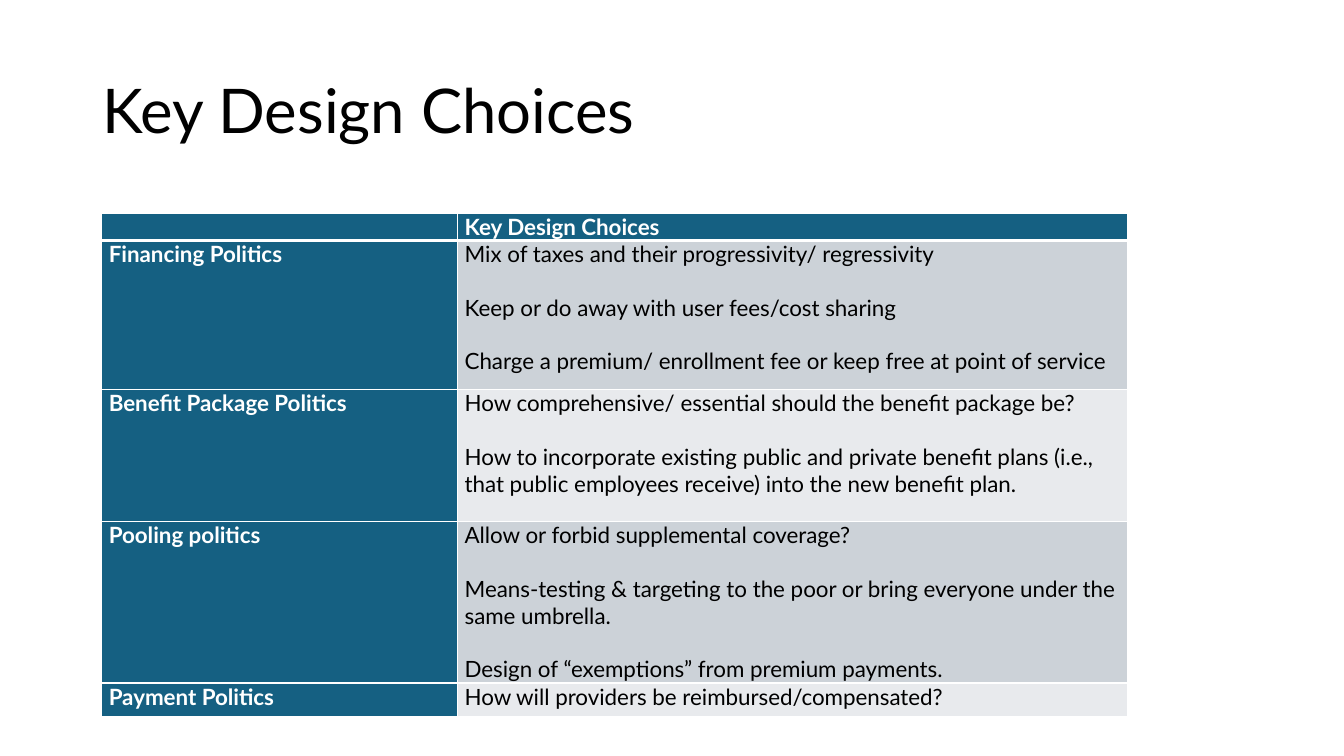
from lxml import etree
from pptx import Presentation
from pptx import util as u
from pptx.dml import color
from pptx.enum import text
from pptx.oxml import ns

FONT = "Lato"
WHITE, BLACK, TEAL = "FFFFFF", "000000", "156082"
BANDS = ("CCD2D8", "E8EAED")
BODY_SIZE = 16
LINE_GAP = 19.2  # one empty line of body text
COLUMN_WIDTHS = (254.2, 478.8)
ROW_HEIGHTS = (19, 106.6, 94.3, 115, 23.8)

CHOICES = [
    ("Financing Politics", [
        "Mix of taxes and their progressivity/ regressivity",
        "Keep or do away with user fees/cost sharing",
        "Charge a premium/ enrollment fee or keep free at point of service"]),
    ("Benefit Package Politics", [
        "How comprehensive/ essential should the benefit package be?",
        "How to incorporate existing public and private benefit plans (i.e., "
        "that public employees receive) into the new benefit plan."]),
    ("Pooling politics", [
        "Allow or forbid supplemental coverage?",
        "Means-testing & targeting to the poor or bring everyone under the "
        "same umbrella.",
        "Design of “exemptions” from premium payments."]),
    ("Payment Politics", [
        "How will providers be reimbursed/compensated?"]),
]


def rgb(hex_code):
    return color.RGBColor.from_string(hex_code)


def add_run(paragraph, wording, size, hex_code, bold=False):
    run = paragraph.add_run()
    run.text = wording
    run.font.name = FONT
    run.font.size = u.Pt(size)
    run.font.bold = bold
    run.font.color.rgb = rgb(hex_code)


def add_title(slide, wording):
    box = slide.shapes.add_textbox(u.Pt(66), u.Pt(28.75), u.Pt(828), u.Pt(104.4))
    frame = box.text_frame
    frame.word_wrap = True
    frame.vertical_anchor = text.MSO_ANCHOR.MIDDLE
    paragraph = frame.paragraphs[0]
    paragraph.line_spacing = 0.9
    add_run(paragraph, wording, 44, BLACK)


def set_borders(cell, bottom_width):
    properties = cell._tc.get_or_add_tcPr()
    for side, width in (("L", 1), ("R", 1), ("T", 1), ("B", bottom_width)):
        line = etree.SubElement(properties, ns.qn(f"a:ln{side}"), w=str(u.Pt(width)))
        fill = etree.SubElement(line, ns.qn("a:solidFill"))
        etree.SubElement(fill, ns.qn("a:srgbClr"), val=WHITE)


def fill_cell(cell, lines, fill, text_color, bold, bottom_width=1):
    cell.margin_left = cell.margin_right = u.Pt(5)
    cell.margin_top = cell.margin_bottom = u.Pt(0)
    set_borders(cell, bottom_width)
    cell.fill.solid()
    cell.fill.fore_color.rgb = rgb(fill)
    frame = cell.text_frame
    for index, wording in enumerate(lines):
        paragraph = frame.add_paragraph() if index else frame.paragraphs[0]
        paragraph.space_before = u.Pt(LINE_GAP if index else 0)
        add_run(paragraph, wording, BODY_SIZE, text_color, bold)
    if not lines:
        # Keep an empty cell from stretching its row
        etree.SubElement(frame.paragraphs[0]._p, ns.qn("a:endParaRPr"),
                         sz=str(BODY_SIZE * 50))


def add_choices_table(slide):
    frame = slide.shapes.add_table(
        len(ROW_HEIGHTS), len(COLUMN_WIDTHS), u.Pt(72.7), u.Pt(152.6),
        u.Pt(sum(COLUMN_WIDTHS)), u.Pt(sum(ROW_HEIGHTS)))
    table = frame.table
    for column, width in zip(table.columns, COLUMN_WIDTHS):
        column.width = u.Pt(width)
    for row, height in zip(table.rows, ROW_HEIGHTS):
        row.height = u.Pt(height)

    # Header row
    for column, lines in enumerate(([], ["Key Design Choices"])):
        fill_cell(table.cell(0, column), lines, TEAL, WHITE, True, bottom_width=3)

    # One row per kind of politics
    for row, (politics, choices) in enumerate(CHOICES, start=1):
        fill_cell(table.cell(row, 0), [politics], TEAL, WHITE, True)
        fill_cell(table.cell(row, 1), choices, BANDS[(row - 1) % 2], BLACK, False)


def main():
    presentation = Presentation()
    presentation.slide_width = u.Pt(960)
    presentation.slide_height = u.Pt(540)
    slide = presentation.slides.add_slide(presentation.slide_layouts[6])
    add_title(slide, "Key Design Choices")
    add_choices_table(slide)
    presentation.save("out.pptx")


if __name__ == "__main__":
    main()
